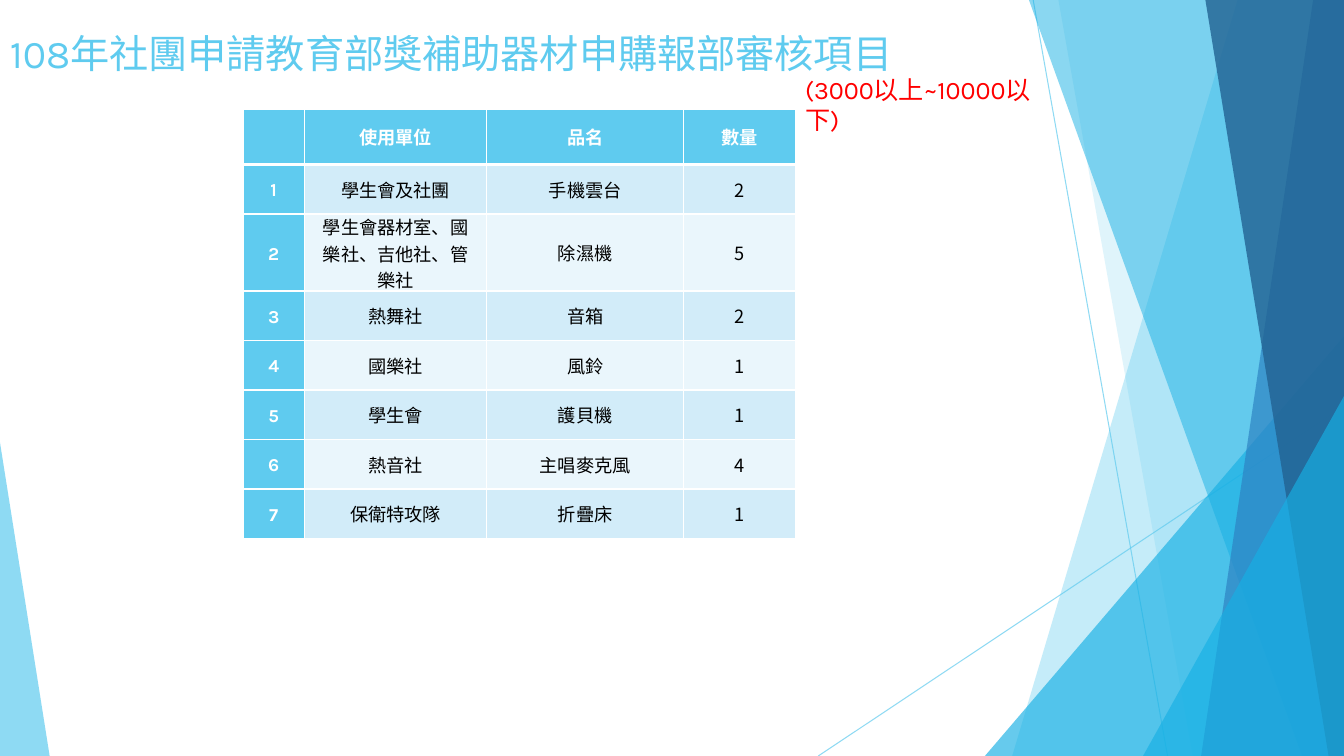
from lxml import etree
from pptx import Presentation
from pptx.dml.color import RGBColor
from pptx.enum.shapes import MSO_CONNECTOR, MSO_SHAPE
from pptx.enum.text import MSO_ANCHOR, PP_ALIGN
from pptx.oxml.ns import qn
from pptx.util import Pt

STRAIGHT = MSO_CONNECTOR.STRAIGHT
TRIANGLE = MSO_SHAPE.ISOSCELES_TRIANGLE
MIDDLE = MSO_ANCHOR.MIDDLE
LEFT, CENTER = PP_ALIGN.LEFT, PP_ALIGN.CENTER

LATIN, CJK = "Karla", "Noto Sans CJK SC"
SKY, AZURE, WHITE = "5FCBEF", "17B0E4", "FFFFFF"
WIDTH, HEIGHT = 960, 540


def paint(fill, color, opacity=100):
    """Make a fill solid, with its opacity in percent."""
    fill.solid()
    fill.fore_color.rgb = RGBColor.from_string(color)
    if opacity < 100:
        rgb = fill._xPr.find(".//" + qn("a:srgbClr"))
        etree.SubElement(rgb, qn("a:alpha"), val=str(opacity * 1000))


def write(frame, text, size, color, font=LATIN, bold=False, align=LEFT,
          spacing=None, after=None):
    frame.word_wrap = True
    paragraph = frame.paragraphs[0]
    paragraph.alignment = align
    if spacing:
        paragraph.line_spacing = Pt(spacing)
    if after:
        paragraph.space_after = Pt(after)
    run = paragraph.add_run()
    run.text = text
    run.font.size = Pt(size)
    run.font.bold = bold
    run.font.name = font
    paint(run.font.fill, color)
    etree.SubElement(run.font._element, qn("a:ea"), typeface=font)


deck = Presentation()
deck.slide_width, deck.slide_height = Pt(WIDTH), Pt(HEIGHT)
slide = deck.slides.add_slide(deck.slide_layouts[6])
shapes = slide.shapes

# Thin background rays
for ray in [(738, 0, 834, HEIGHT), (WIDTH, 290, 584.5, HEIGHT)]:
    line = shapes.add_connector(STRAIGHT, *map(Pt, ray))
    line.line.width = Pt(0.75)
    paint(line.line.fill, SKY, 70)
    etree.SubElement(line._element.spPr, qn("a:effectLst"))

# Facets: a band runs from its top x to its bottom x and fills to the right
# edge; a triangle has left, top, width, height and the place of its tip
facets = [
    ("band", (884, 723), SKY, 36),
    ("band", (756, 852), SKY, 20),
    ("triangle", (703.5, 240, 256.5, 300, 1), AZURE, 66),
    ("band", (735, 929.5), AZURE, 50),
    ("band", (938, 858), "2E83C3", 70),
    ("band", (861, 949), "226292", 80),
    ("triangle", (816.5, 283, 143.5, 257, 1), AZURE, 66),
    ("triangle", (0, 316, 35.5, 224, 0), SKY, 70),
]
for kind, place, color, opacity in facets:
    if kind == "band":
        top_x, bottom_x = place
        outline = shapes.build_freeform(top_x, 0, scale=Pt(1))
        outline.add_line_segments(
            [(WIDTH, 0), (WIDTH, HEIGHT), (bottom_x, HEIGHT)], close=True)
        facet = outline.convert_to_shape()
    else:
        *box, tip = place
        facet = shapes.add_shape(TRIANGLE, *map(Pt, box))
        facet.adjustments[0] = tip
    paint(facet.fill, color, opacity)
    facet.line.fill.background()
    facet.shadow.inherit = False

title = shapes.add_textbox(Pt(0), Pt(17.5), Pt(688.5), Pt(38))
write(title.text_frame, "108年社團申請教育部獎補助器材申購報部審核項目", 28, SKY)
price_range = shapes.add_textbox(Pt(568), Pt(49.5), Pt(196.5), Pt(29))
write(price_range.text_frame, "(3000以上~10000以下)", 18, "FF0000")

# Equipment table
header = ["", "使用單位", "品名", "數量"]
items = [
    ("學生會及社團", "手機雲台", "2"),
    ("學生會器材室、國樂社、吉他社、管樂社", "除濕機", "5"),
    ("熱舞社", "音箱", "2"),
    ("國樂社", "風鈴", "1"),
    ("學生會", "護貝機", "1"),
    ("熱音社", "主唱麥克風", "4"),
    ("保衛特攻隊", "折疊床", "1"),
]
rows = [header] + [(str(n), *item) for n, item in enumerate(items, 1)]
column_widths = [44, 130, 141, 79.5]
row_heights = [39, 35.4, 55] + [35.4] * 5
table = shapes.add_table(len(rows), len(header), Pt(173.5), Pt(78.5),
                         Pt(sum(column_widths)), Pt(sum(row_heights))).table
for column, width in zip(table.columns, column_widths):
    column.width = Pt(width)
for row, height in zip(table.rows, row_heights):
    row.height = Pt(height)

for r, row in enumerate(rows):
    for c, text in enumerate(row):
        cell = table.cell(r, c)
        cell.vertical_anchor = MIDDLE
        cell.margin_left = cell.margin_right = Pt(6.8)
        cell.margin_top = cell.margin_bottom = 0
        if r == 0 or c == 0:
            paint(cell.fill, SKY)
            style = dict(color=WHITE, bold=True, spacing=17.2, after=4.5,
                         font=CJK if r == 0 else LATIN)
        else:
            paint(cell.fill, "D2ECF9" if r % 2 else "EAF6FC")
            style = dict(color="000000", font=CJK)
        if text:
            write(cell.text_frame, text, 13, align=CENTER, **style)

        properties = cell._tc.get_or_add_tcPr()
        for position, side in enumerate("LRTB"):
            under_header = (r, side) in [(0, "B"), (1, "T")]
            border = etree.Element(qn("a:ln" + side),
                                   w=str(Pt(3 if under_header else 1)))
            solid = etree.SubElement(border, qn("a:solidFill"))
            etree.SubElement(solid, qn("a:srgbClr"), val=WHITE)
            properties.insert(position, border)

deck.save("out.pptx")
